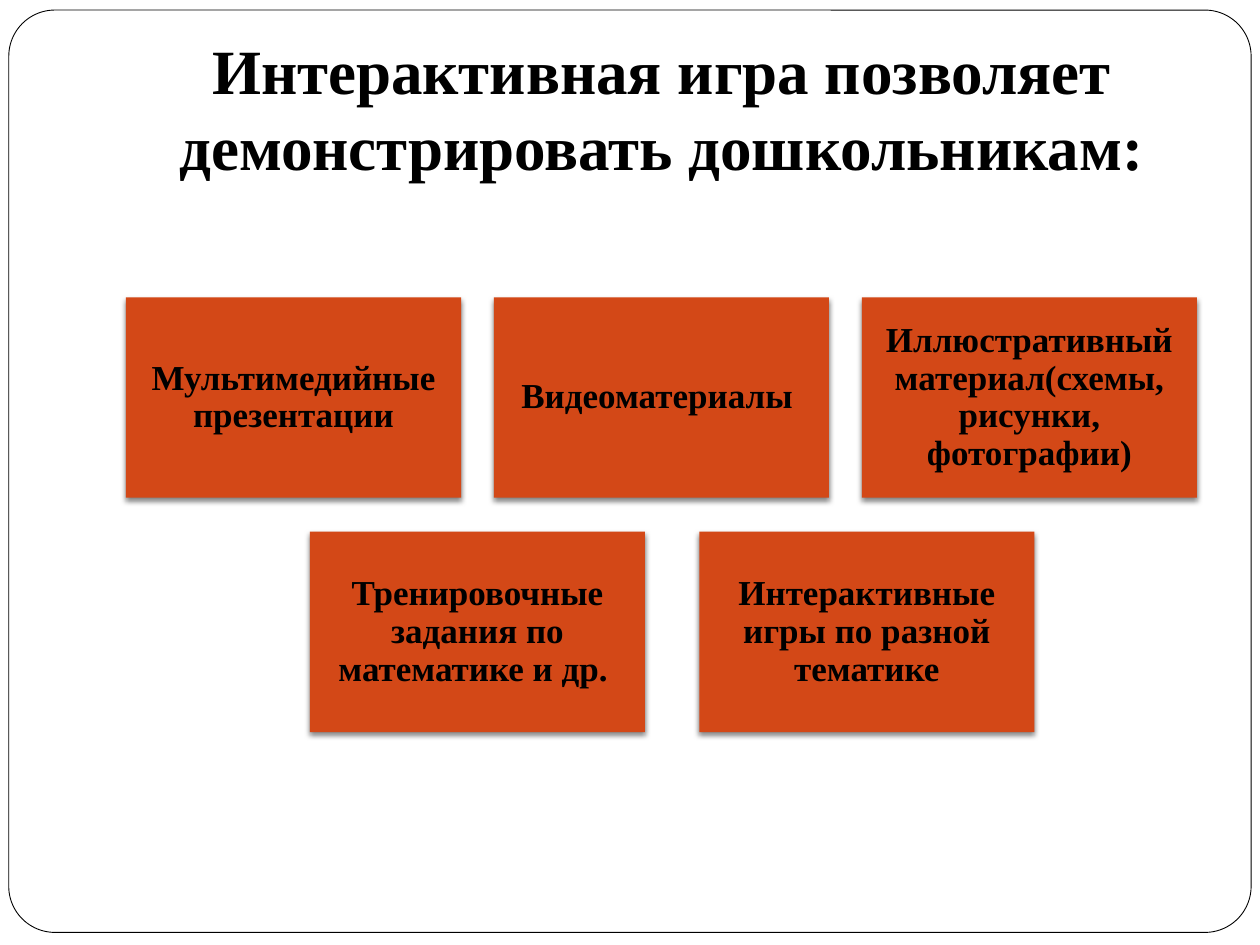
import pptx
import pptx.util
import pptx.dml.color
import pptx.enum.shapes
import pptx.enum.text
import pptx.oxml
import pptx.oxml.ns

Inches, Pt = pptx.util.Inches, pptx.util.Pt
SHAPE = pptx.enum.shapes.MSO_SHAPE
ANCHOR = pptx.enum.text.MSO_ANCHOR
SHADOW = (
    f'<a:effectLst {pptx.oxml.ns.nsdecls("a")}>'
    '<a:outerShdw blurRad="38100" dist="25400" dir="5400000" rotWithShape="0">'
    '<a:srgbClr val="000000"><a:alpha val="50000"/></a:srgbClr>'
    '</a:outerShdw></a:effectLst>'
)


def rgb(value):
    return pptx.dml.color.RGBColor.from_string(value)


def write(sp, text, size, anchor, margins):
    """Put one bold centred paragraph in sp; margins are left, top, right, bottom."""
    tf = sp.text_frame
    tf.word_wrap = True
    tf.vertical_anchor = anchor
    tf.margin_left, tf.margin_top, tf.margin_right, tf.margin_bottom = map(Inches, margins)
    p = tf.paragraphs[0]
    p.alignment = pptx.enum.text.PP_ALIGN.CENTER
    r = p.add_run()
    r.text = text
    r.font.name = "Times New Roman"
    r.font.size = Pt(size)
    r.font.bold = True
    r.font.color.rgb = rgb("000000")
    return p


prs = pptx.Presentation()
prs.slide_width, prs.slide_height = Inches(10), Inches(7.5)
s = prs.slides.add_slide(prs.slide_layouts[6])

# Frame
frame = s.shapes.add_shape(SHAPE.ROUNDED_RECTANGLE, Inches(0.07), Inches(0.08),
                           Inches(9.86), Inches(7.32))
frame.adjustments[0] = 0.05
frame.shadow.inherit = False
frame.fill.solid()
frame.fill.fore_color.rgb = rgb("FFFFFF")
frame.line.color.rgb = rgb("000000")
frame.line.width = Pt(0.5)

# Title
title = s.shapes.add_textbox(Inches(1), Inches(0.3), Inches(8.5), Inches(1.25))
write(title, "Интерактивная игра позволяет демонстрировать дошкольникам:",
      36, ANCHOR.BOTTOM, (0.1, 0.05, 0.1, 0.1))

# Cards: left edge of the row, top, step between cards, texts
card_w, card_h = 2.66, 1.59
rows = [
    (1, 2.36, 2.92, ["Мультимедийные презентации", "Видеоматериалы ",
                     "Иллюстративный материал(схемы, рисунки, фотографии)"]),
    (2.46, 4.22, 3.09, ["Тренировочные задания по математике и др. ",
                        "Интерактивные игры по разной тематике"]),
]
for left, top, step, texts in rows:
    for i, text in enumerate(texts):
        card = s.shapes.add_shape(SHAPE.RECTANGLE, Inches(left + i * step), Inches(top),
                                  Inches(card_w), Inches(card_h))
        card.fill.solid()
        card.fill.fore_color.rgb = rgb("D34817")
        card.line.fill.background()
        card._element.spPr.append(pptx.oxml.parse_xml(SHADOW))
        p = write(card, text, 20, ANCHOR.MIDDLE, (0.08,) * 4)
        p.line_spacing = 0.9

prs.save("out.pptx")
